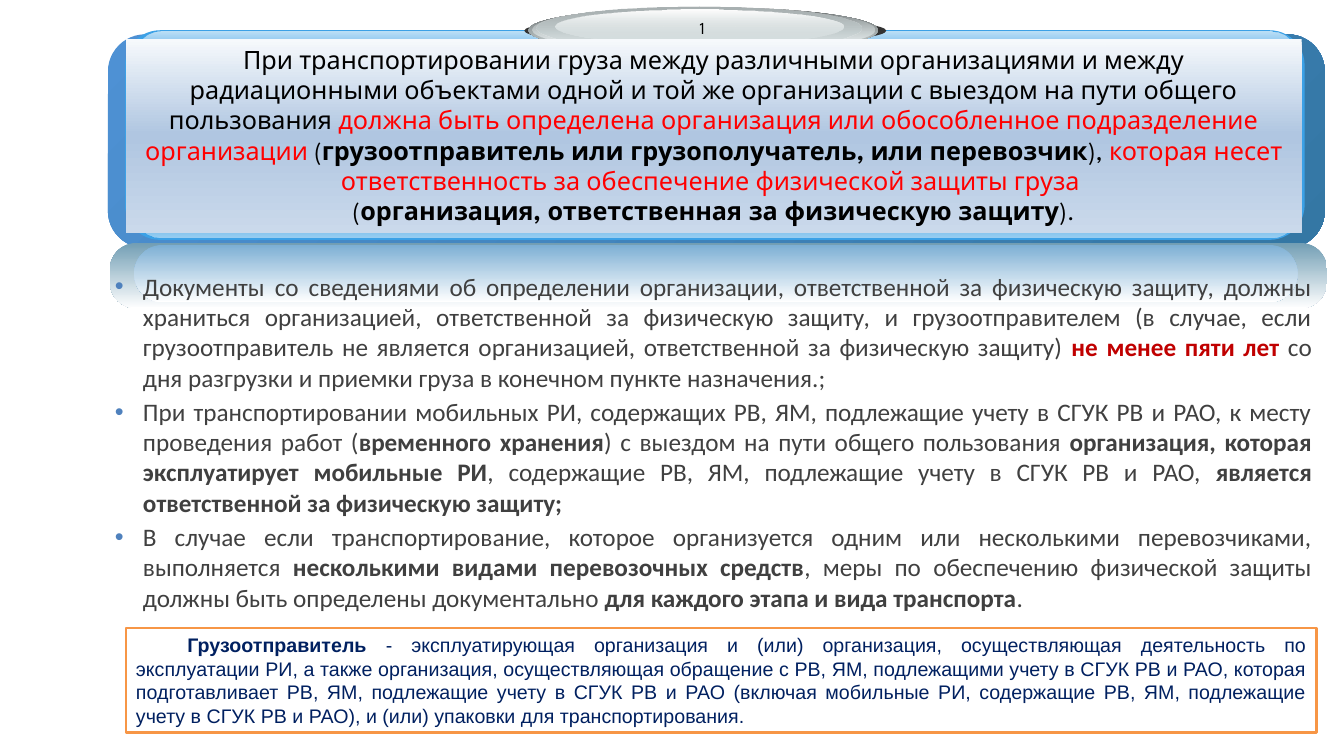
from lxml import etree
from pptx import Presentation
from pptx.dml.color import RGBColor
from pptx.enum.shapes import MSO_SHAPE
from pptx.enum.text import MSO_ANCHOR, PP_ALIGN
from pptx.oxml.ns import qn
from pptx.util import Inches, Pt

RECT, ROUND, OVAL = MSO_SHAPE.RECTANGLE, MSO_SHAPE.ROUNDED_RECTANGLE, MSO_SHAPE.OVAL
CENTER, JUSTIFY = PP_ALIGN.CENTER, PP_ALIGN.JUSTIFY
TOP = MSO_ANCHOR.TOP
BREAK = "\n"


class Theme:
    black, white, grey = "000000", "FFFFFF", "404040"
    red, dark_red, navy = "FF0000", "C00000", "002060"
    orange, bullet = "F79646", "4F81BD"
    blue, pale_blue, light_blue = "3CA1E6", "9BCFF2", "BEE0F7"
    dark, silver = "333333", "D6E1E2"
    head = {"name": "League Spartan", "size": Pt(18)}
    number = {"name": "League Spartan", "size": Pt(12)}
    body = {"name": "Calibri", "size": Pt(18)}
    note = {"name": "Arial", "size": Pt(14)}


class SlideBuilder:
    def __init__(self, slide, theme):
        self.s = slide
        self.theme = theme

    def shape(self, kind, box, fill, angle=90, adj=None, line=None):
        """Fill is a colour, or a list of (position %, colour[, opacity %]) stops."""
        sp = self.s.shapes.add_shape(kind, *map(Inches, box))
        sp.shadow.inherit = False
        if adj is not None:
            sp.adjustments[0] = adj
        if isinstance(fill, str):
            sp.fill.solid()
            sp.fill.fore_color.rgb = RGBColor.from_string(fill)
        else:
            self.gradient(sp, fill, angle)
        if line:
            sp.line.color.rgb = RGBColor.from_string(line)
            sp.line.width = Pt(2)
        else:
            sp.line.fill.background()
        return sp

    def gradient(self, sp, stops, angle):
        """Angle is clockwise: 90 runs from top to bottom."""
        sp.fill.gradient()
        sp.fill.gradient_angle = 360 - angle
        stop_list = next(sp._element.spPr.iter(qn("a:gsLst")))
        for old in list(stop_list):
            stop_list.remove(old)
        for pos, color, *opacity in stops:
            gs = etree.SubElement(stop_list, qn("a:gs"), pos=str(pos * 1000))
            clr = etree.SubElement(gs, qn("a:srgbClr"), val=color)
            if opacity:
                etree.SubElement(clr, qn("a:alpha"), val=str(opacity[0] * 1000))

    def textbox(self, box):
        return self.s.shapes.add_textbox(*map(Inches, box))

    def text(self, sp, paragraphs, font, color, align, wrap=True,
             indent=(0, 0), bullet=None, gap=0):
        """Each paragraph is a list of (text[, bold[, colour]]) runs or BREAK."""
        tf = sp.text_frame
        tf.word_wrap = wrap
        tf.vertical_anchor = TOP
        for i, runs in enumerate(paragraphs):
            p = tf.add_paragraph() if i else tf.paragraphs[0]
            p.alignment = align
            if i:
                p.space_before = Pt(gap)
            pPr = p._p.get_or_add_pPr()
            for key, value in zip(("marL", "indent"), indent):
                pPr.set(key, str(Inches(value)))
            if bullet:
                clr = etree.SubElement(pPr, qn("a:buClr"))
                etree.SubElement(clr, qn("a:srgbClr"), val=bullet)
                etree.SubElement(pPr, qn("a:buFont"), typeface="Arial")
                etree.SubElement(pPr, qn("a:buChar"), char="•")
            for run in runs:
                if run == BREAK:
                    p.add_line_break()
                else:
                    self.run(p, font, color, *run)

    def run(self, p, font, color, text, bold=False, own_color=None):
        r = p.add_run()
        r.text = text
        for key, value in {**font, "bold": bold}.items():
            setattr(r.font, key, value)
        r.font.color.rgb = RGBColor.from_string(own_color or color)


T = Theme

NOTE = [[
    ("Грузоотправитель ", True),
    ("- эксплуатирующая организация и (или) организация, осуществляющая деятельность по "
     "эксплуатации РИ, а также организация, осуществляющая обращение с РВ, ЯМ, подлежащими "
     "учету в СГУК РВ и РАО, которая подготавливает РВ, ЯМ, подлежащие учету в СГУК РВ и РАО "
     "(включая мобильные РИ, содержащие РВ, ЯМ, подлежащие учету в СГУК РВ и РАО), и (или) "
     "упаковки для транспортирования.",),
]]

HEADING = [[
    ("При транспортировании груза между различными организациями и между радиационными "
     "объектами одной и той же организации с выездом на пути общего пользования ",),
    ("должна быть определена организация или обособленное подразделение организации ",
     False, T.red),
    ("(",),
    ("грузоотправитель или грузополучатель, или перевозчик", True),
    ("), ",),
    ("которая несет ответственность за обеспечение физической защиты груза ", False, T.red),
    BREAK,
    ("(",),
    ("организация, ответственная за физическую защиту", True),
    (").",),
]]

RULES = [
    [("Документы со сведениями об определении организации, ответственной за физическую "
      "защиту, должны храниться организацией, ответственной за физическую защиту, и "
      "грузоотправителем (в случае, если грузоотправитель не является организацией, "
      "ответственной за физическую защиту) ",),
     ("не менее пяти лет ", True, T.dark_red),
     ("со дня разгрузки и приемки груза в конечном пункте назначения.;",)],
    [("При транспортировании мобильных РИ, содержащих РВ, ЯМ, подлежащие учету в СГУК РВ и "
      "РАО, к месту проведения работ (",),
     ("временного хранения", True),
     (") с выездом на пути общего пользования ",),
     ("организация, которая эксплуатирует мобильные РИ", True),
     (", содержащие РВ, ЯМ, подлежащие учету в СГУК РВ и РАО, ",),
     ("является ответственной за физическую защиту;", True)],
    [("В случае если транспортирование, которое организуется одним или несколькими "
      "перевозчиками, выполняется ",),
     ("несколькими видами перевозочных средств", True),
     (", меры по обеспечению физической защиты должны быть определены документально ",),
     ("для каждого этапа и вида транспорта", True),
     (".",)],
]

# box, fill, corner, angle
PANEL = [
    ((1.07, 0.34, 12.07, 2.12), [(0, "4E91D4"), (100, "3477A4")], 0.175, 45),
    ((1.24, 0.3, 11.7, 2.08), T.blue, 0.167, 90),
    ((1.33, 1.83, 11.54, 0.53), [(0, T.blue, 0), (100, T.pale_blue)], 0.5, 90),
    ((1.33, 0.31, 11.54, 0.53), [(0, T.light_blue), (100, T.blue, 0)], 0.5, 90),
    ((1.09, 2.41, 12.07, 0.65), [(0, "729EB4"), (100, T.white)], 0.404, 90),
    ((1.33, 2.43, 11.54, 0.57), [(0, "7DAFD4"), (100, T.white)], 0.5, 90),
]

BADGE = [
    ((5.2, 0.16, 3.59, 0.29), T.dark),
    ((5.24, 0.07, 3.47, 0.46), [(0, "636869"), (100, T.silver)]),
    ((5.28, 0.07, 3.39, 0.45), [(0, T.silver, 0), (100, "F1F5F5")]),
    ((5.32, 0.07, 3.22, 0.42), [(0, "AAB2B3"), (100, T.silver, 48)]),
    ((5.51, 0.09, 2.86, 0.34), [(0, T.white), (100, T.silver, 38)]),
]

HEADING_FILL = [(0, "F6F9FC"), (49, "B0C6E1"), (50, "B0C6E1"), (100, "CAD9EB")]


def main():
    prs = Presentation()
    prs.slide_width, prs.slide_height = Inches(13.33), Inches(7.5)
    b = SlideBuilder(prs.slides.add_slide(prs.slide_layouts[6]), T)

    note = b.shape(RECT, (1.25, 6.23, 11.81, 1.04), T.white, line=T.orange)
    b.text(note, NOTE, T.note, T.navy, JUSTIFY, indent=(0, 0.51))

    for box, fill, corner, angle in PANEL:
        b.shape(ROUND, box, fill, angle, corner)
    for box, fill in BADGE:
        b.shape(OVAL, box, fill)
    number = b.textbox((6.49, 0.13, 0.95, 0.21))
    b.text(number, [[("1",)]], T.number, T.black, CENTER, wrap=False)

    heading = b.shape(RECT, (1.25, 0.39, 11.66, 1.92), HEADING_FILL)
    b.text(heading, HEADING, T.head, T.black, CENTER)

    rules = b.textbox((1.04, 2.64, 12.07, 3.52))
    b.text(rules, RULES, T.body, T.grey, JUSTIFY,
           indent=(0.28, -0.28), bullet=T.bullet, gap=3)

    prs.save("out.pptx")


if __name__ == "__main__":
    main()
